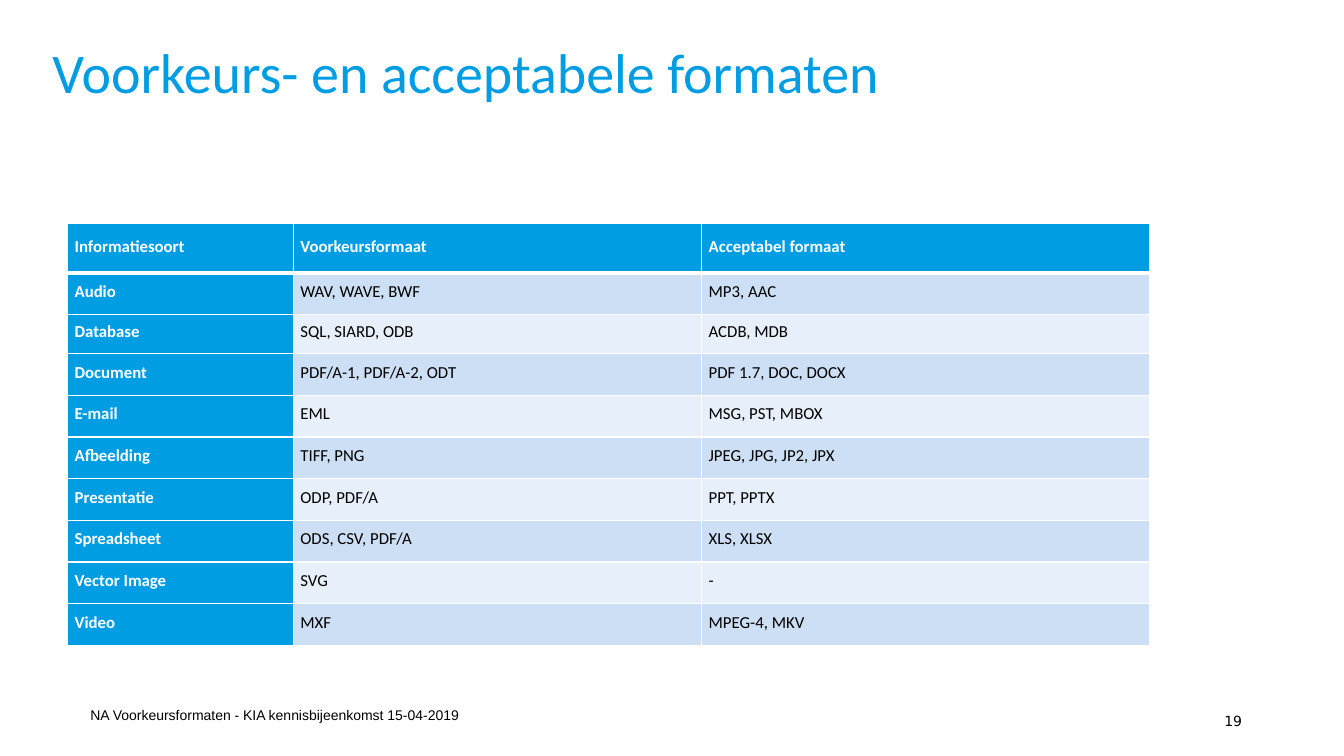
"""Build the slide on preferred and acceptable file formats."""
from lxml import etree
from pptx import Presentation
from pptx import util as u
from pptx.dml.color import RGBColor
from pptx.enum import text
from pptx.oxml.ns import qn

TITLE = "Voorkeurs- en acceptabele formaten"
FOOTER = "NA Voorkeursformaten - KIA kennisbijeenkomst 15-04-2019"
PAGE_NUMBER = "19"
FORMATS = [
    ("Informatiesoort", "Voorkeursformaat", "Acceptabel formaat"),
    ("Audio", "WAV, WAVE, BWF", "MP3, AAC"),
    ("Database", "SQL, SIARD, ODB", "ACDB, MDB"),
    ("Document", "PDF/A-1, PDF/A-2, ODT", "PDF 1.7, DOC, DOCX"),
    ("E-mail", "EML", "MSG, PST, MBOX"),
    ("Afbeelding", "TIFF, PNG", "JPEG, JPG, JP2, JPX"),
    ("Presentatie", "ODP, PDF/A", "PPT, PPTX"),
    ("Spreadsheet", "ODS, CSV, PDF/A", "XLS, XLSX"),
    ("Vector Image", "SVG", "-"),
    ("Video", "MXF", "MPEG-4, MKV"),
]
COLORS = {
    "blue": "009DE3",
    "band_dark": "CCDFF4",
    "band_light": "E7EFFA",
    "white": "FFFFFF",
    "black": "000000",
}
COLUMN_WIDTHS = (5.69, 10.29, 11.3)
ROW_HEIGHTS = (1.24, 1.04, 0.99) + (1.05,) * (len(FORMATS) - 3)


def color(name):
    return RGBColor.from_string(COLORS[name])


def write(frame, content, size=12, font="Calibri", fill="black", bold=False,
          align=text.PP_ALIGN.LEFT, spacing=None):
    paragraph = frame.paragraphs[0]
    paragraph.alignment = align
    paragraph.line_spacing = spacing
    run = paragraph.add_run()
    run.text = content
    run.font.size = u.Pt(size)
    run.font.name = font
    run.font.bold = bold
    run.font.color.rgb = color(fill)


def add_text(slide, content, box, anchor=text.MSO_ANCHOR.TOP, side=0.25, **style):
    frame = slide.shapes.add_textbox(*map(u.Cm, box)).text_frame
    frame.word_wrap = True
    frame.vertical_anchor = anchor
    frame.margin_left = frame.margin_right = u.Cm(side)
    write(frame, content, **style)


def add_borders(cell, widths):
    properties = cell._tc.get_or_add_tcPr()
    for position, (side, points) in enumerate(widths.items()):
        line = etree.Element(qn(f"a:ln{side}"), w=str(u.Pt(points)))
        solid = etree.SubElement(line, qn("a:solidFill"))
        etree.SubElement(solid, qn("a:srgbClr"), val=COLORS["white"])
        properties.insert(position, line)


def add_formats_table(slide):
    table = slide.shapes.add_table(
        len(FORMATS), len(COLUMN_WIDTHS), u.Cm(1.7), u.Cm(5.64),
        u.Cm(sum(COLUMN_WIDTHS)), u.Cm(sum(ROW_HEIGHTS))).table
    for column, width in zip(table.columns, COLUMN_WIDTHS):
        column.width = u.Cm(width)
    for index, (row, height) in enumerate(zip(table.rows, ROW_HEIGHTS)):
        row.height = u.Cm(height)
        band = "band_dark" if index % 2 else "band_light"
        borders = {"L": 1, "R": 1, "T": 3 if index == 1 else 1,
                   "B": 3 if index == 0 else 1}
        for position, cell in enumerate(row.cells):
            heading = index == 0 or position == 0
            cell.fill.solid()
            cell.fill.fore_color.rgb = color("blue" if heading else band)
            cell.vertical_anchor = text.MSO_ANCHOR.MIDDLE
            cell.margin_left = cell.margin_right = u.Cm(0.18)
            cell.margin_top = cell.margin_bottom = 0
            write(cell.text_frame, FORMATS[index][position], bold=heading,
                  fill="white" if heading else "black", spacing=u.Pt(12))
            add_borders(cell, borders)


def main():
    presentation = Presentation()
    presentation.slide_width = u.Cm(33.87)
    presentation.slide_height = u.Cm(19.05)
    slide = presentation.slides.add_slide(presentation.slide_layouts[6])
    add_text(slide, TITLE, (1.32, 1.02, 25.4, 3.68), side=0, size=40,
             fill="blue", spacing=0.9)
    add_formats_table(slide)
    add_text(slide, PAGE_NUMBER, (23.93, 17.65, 7.62, 1.02), size=10,
             anchor=text.MSO_ANCHOR.MIDDLE, font="DejaVu Sans",
             align=text.PP_ALIGN.RIGHT)
    add_text(slide, FOOTER, (2.03, 17.73, 30.73, 1.02), size=10,
             font="Arial", spacing=0.9)
    presentation.save("out.pptx")


if __name__ == "__main__":
    main()
